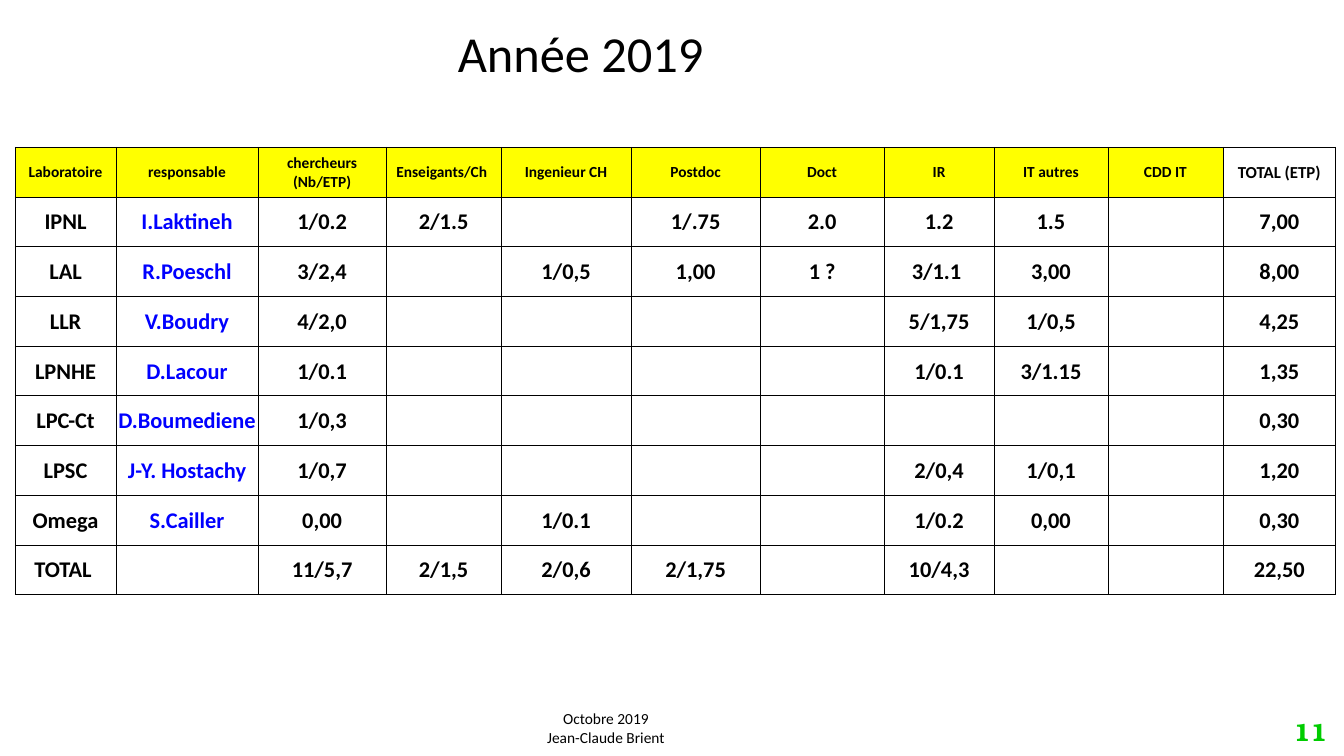
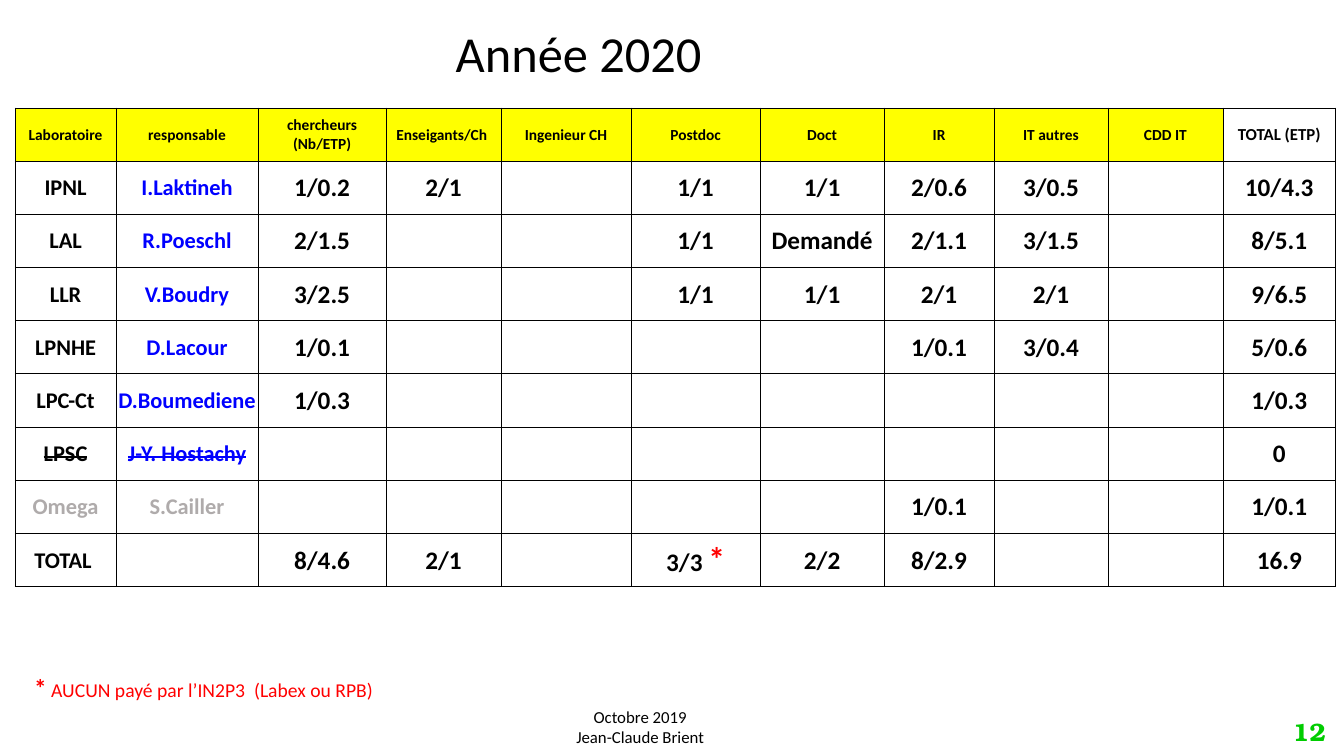
from lxml import etree
from pptx import Presentation
from pptx.dml.color import RGBColor
from pptx.enum.text import MSO_ANCHOR, MSO_AUTO_SIZE, PP_ALIGN
from pptx.oxml.ns import qn
from pptx.util import Inches, Pt

LEFT, CENTER, RIGHT = PP_ALIGN.LEFT, PP_ALIGN.CENTER, PP_ALIGN.RIGHT
TOP, MIDDLE = MSO_ANCHOR.TOP, MSO_ANCHOR.MIDDLE
NO_AUTOFIT = MSO_AUTO_SIZE.NONE
TITLE_ONLY = 5

COLORS = {
    "text": "000000",
    "header": "FFFF00",
    "name": "0000FF",
    "inactive": "AFABAB",
    "note": "FF0000",
    "number": "00CC00",
}
BASE = {"name": "Calibri", "size": 16, "bold": False, "color": "text"}
FOOTER = ["Octobre 2019", "Jean-Claude Brient"]
COLUMNS = [1, 1.41, 1.27, 1.14, 1.29, 1.28, 1.23, 1.09, 1.13, 1.14, 1.12]
HEADER = ["Laboratoire", "responsable", "chercheurs (Nb/ETP)", "Enseigants/Ch ",
          "Ingenieur CH", "Postdoc", "Doct", "IR", "IT autres", "CDD IT", "TOTAL (ETP)"]
LABS = [
    ("IPNL", "I.Laktineh"),
    ("LAL", "R.Poeschl"),
    ("LLR", "V.Boudry"),
    ("LPNHE", "D.Lacour"),
    ("LPC-Ct", "D.Boumediene"),
    ("LPSC", "J-Y. Hostachy"),
    ("Omega", "S.Cailler"),
    ("TOTAL ", ""),
]

YEARS = [
    {
        "title": "Année 2019", "title_box": (4.44, 0.17, 2.66, 0.71),
        "number": "11", "number_box": (12.65, 7.06, 0.61, 0.4),
        "footer_box": (5.32, 6.99, 1.38, 0.47), "footer_size": 11,
        "table_box": (0.15, 1.46, 13.1, 4.44), "value_size": 16,
        "struck": [], "inactive": [],
        "values": [
            ["1/0.2", "2/1.5", "", "1/.75", "2.0", "1.2", "1.5", "", "7,00"],
            ["3/2,4", "", "1/0,5", "1,00", "1 ?", "3/1.1 ", "3,00", "", "8,00"],
            ["4/2,0", "", "", "", "", "5/1,75", "1/0,5", "", "4,25"],
            ["1/0.1", "", "", "", "", "1/0.1", "3/1.15", "", "1,35"],
            ["1/0,3", "", "", "", "", "", "", "", "0,30"],
            ["1/0,7", "", "", "", "", "2/0,4", "1/0,1", "", "1,20"],
            ["0,00", "", "1/0.1", "", "", "1/0.2", "0,00", "", "0,30"],
            ["11/5,7", "2/1,5", "2/0,6", "2/1,75", "", "10/4,3", "", "", "22,50"],
        ],
    },
    {
        "title": "Année 2020", "title_box": (4.42, 0.17, 2.66, 0.71),
        "number": "12", "number_box": (12.61, 7.06, 0.64, 0.4),
        "footer_box": (5.61, 6.96, 1.48, 0.5), "footer_size": 12,
        "table_box": (0.15, 1.07, 13.1, 4.75), "value_size": 18,
        "struck": ["LPSC"], "inactive": ["Omega"],
        "values": [
            ["1/0.2", "2/1", "", "1/1", "1/1", "2/0.6", "3/0.5", "", "10/4.3"],
            ["2/1.5", "", "", "1/1", "Demandé", "2/1.1", "3/1.5", "", "8/5.1"],
            ["3/2.5", "", "", "1/1", "1/1", "2/1", "2/1", "", "9/6.5"],
            ["1/0.1", "", "", "", "", "1/0.1", "3/0.4", "", "5/0.6"],
            ["1/0.3", "", "", "", "", "", "", "", "1/0.3"],
            ["", "", "", "", "", "", "", "", "0"],
            ["", "", "", "", "", "1/0.1", "", "", "1/0.1"],
            ["8/4.6", "2/1", "", "3/3 *", "2/2", "8/2.9", "", "", "16.9"],
        ],
    },
]


def rgb(key):
    return RGBColor.from_string(COLORS[key])


def add_run(p, text, **fmt):
    r = p.add_run()
    r.text = text
    values = {**BASE, **fmt}
    r.font.color.rgb = rgb(values.pop("color"))
    values["size"] = Pt(values["size"])
    if values.pop("strike", False):
        r._r.get_or_add_rPr().set("strike", "sngStrike")
    for key, value in values.items():
        setattr(r.font, key, value)


def set_frame(tf, align, anchor, wrap):
    tf.auto_size = NO_AUTOFIT
    tf.word_wrap = wrap
    tf.vertical_anchor = anchor
    tf.paragraphs[0].alignment = align


def add_text(s, box, lines, align=LEFT, anchor=TOP, wrap=False):
    tf = s.shapes.add_textbox(*map(Inches, box)).text_frame
    set_frame(tf, align, anchor, wrap)
    for i, runs in enumerate(lines):
        p = tf.add_paragraph() if i else tf.paragraphs[0]
        p.alignment = align
        for text, fmt in runs:
            add_run(p, text, **fmt)


def add_title(s, box, text):
    title = s.shapes.title
    title.left, title.top, title.width, title.height = map(Inches, box)
    set_frame(title.text_frame, LEFT, TOP, False)
    p = title.text_frame.paragraphs[0]
    p.line_spacing = 1
    p.space_before = Pt(0)
    add_run(p, text, size=36)


def set_borders(cell):
    tcPr = cell._tc.get_or_add_tcPr()
    for side in ("a:lnL", "a:lnR", "a:lnT", "a:lnB"):
        ln = etree.SubElement(tcPr, qn(side), w=str(Pt(0.5)))
        fill = etree.SubElement(ln, qn("a:solidFill"))
        etree.SubElement(fill, qn("a:srgbClr"), val=COLORS["text"])


def cell_format(row, col, year):
    if row == 0:
        return {"size": 12 if col == len(COLUMNS) - 1 else 11}
    if col > 1:
        return {"size": year["value_size"]}
    lab = LABS[row - 1][0]
    color = "name" if col else "text"
    return {"color": "inactive" if lab in year["inactive"] else color,
            "strike": lab in year["struck"]}


def fill_cell(cell, text, fmt, header):
    cell.margin_left = cell.margin_right = cell.margin_top = Inches(0.01)
    cell.margin_bottom = 0
    cell.vertical_anchor = MIDDLE
    set_borders(cell)
    if header:
        cell.fill.solid()
        cell.fill.fore_color.rgb = rgb("header")
    else:
        cell.fill.background()
    p = cell.text_frame.paragraphs[0]
    p.alignment = CENTER
    main, star, _ = text.partition("*")
    if main:
        add_run(p, main, bold=True, **fmt)
    if star:
        add_run(p, star, bold=True, size=24, color="note")


def add_staff_table(s, box, year):
    rows = [HEADER] + [[*lab, *values] for lab, values in zip(LABS, year["values"])]
    table = s.shapes.add_table(len(rows), len(COLUMNS), *map(Inches, box)).table
    table.first_row = table.horz_banding = False
    for column, width in zip(table.columns, COLUMNS):
        column.width = Inches(width)
    for i, texts in enumerate(rows):
        table.rows[i].height = Inches(box[3] / len(rows))
        for j, text in enumerate(texts):
            header = i == 0 and j < len(COLUMNS) - 1
            fill_cell(table.cell(i, j), text, cell_format(i, j, year), header)


def add_footer(s, year):
    number = {"name": "TeX Gyre Bonum", "size": 18, "bold": True, "color": "number"}
    add_text(s, year["number_box"], [[(year["number"], number)]], RIGHT, MIDDLE, True)
    lines = [[(line, {"size": year["footer_size"]})] for line in FOOTER]
    add_text(s, year["footer_box"], lines, CENTER)


def add_note(s, box):
    add_text(s, box, [[
        ("*", {"size": 18, "bold": True, "color": "note"}),
        (" AUCUN payé par l’IN2P3  (Labex ou RPB)", {"size": 14, "color": "note"}),
    ]])


def add_year_slide(prs, year):
    s = prs.slides.add_slide(prs.slide_layouts[TITLE_ONLY])
    add_title(s, year["title_box"], year["title"])
    add_staff_table(s, year["table_box"], year)
    add_footer(s, year)
    return s


def main():
    prs = Presentation()
    prs.slide_width, prs.slide_height = Inches(13.33), Inches(7.5)
    slides = [add_year_slide(prs, year) for year in YEARS]
    add_note(slides[-1], (0.24, 6.62, 3.59, 0.4))
    prs.save("out.pptx")


if __name__ == "__main__":
    main()
